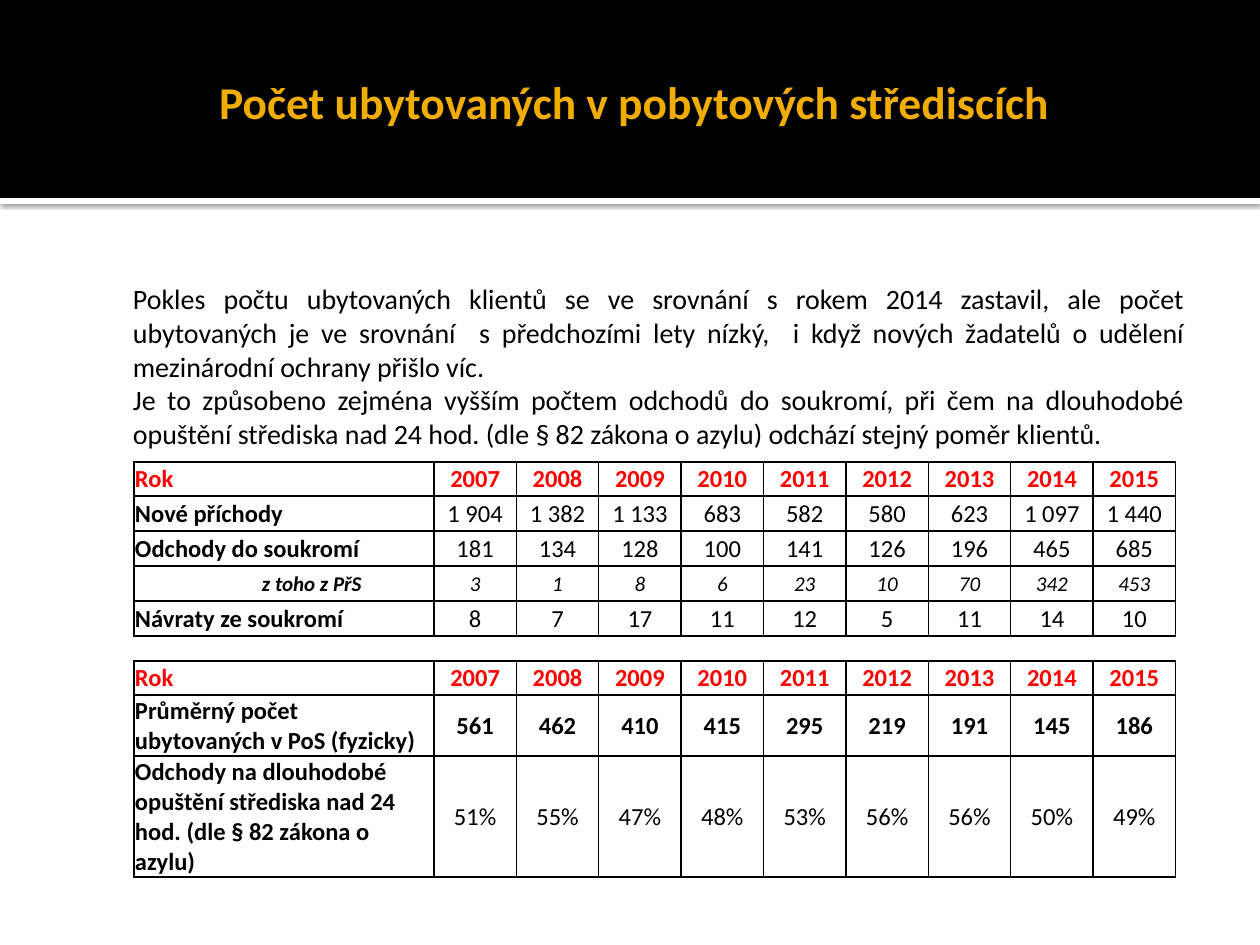
from lxml import etree
from pptx import Presentation
from pptx.dml.color import RGBColor
from pptx.enum.shapes import MSO_SHAPE
from pptx.enum.text import MSO_ANCHOR, PP_ALIGN
from pptx.oxml import parse_xml
from pptx.oxml.ns import nsdecls, qn
from pptx.util import Emu, Pt

RECT = MSO_SHAPE.RECTANGLE
MIDDLE = MSO_ANCHOR.MIDDLE
LEFT, CENTER, JUSTIFY = PP_ALIGN.LEFT, PP_ALIGN.CENTER, PP_ALIGN.JUSTIFY
BLACK = RGBColor(0x00, 0x00, 0x00)
WHITE = RGBColor(0xFF, 0xFF, 0xFF)
GOLD = RGBColor(0xF0, 0xAD, 0x00)
RED = RGBColor(0xFF, 0x00, 0x00)
FONT = "Calibri"

TITLE = "Počet ubytovaných v pobytových střediscích"
BODY = [
    "Pokles počtu ubytovaných klientů se ve srovnání s rokem 2014 zastavil, "
    "ale počet ubytovaných je ve srovnání  s předchozími lety nízký,  "
    "i když nových žadatelů o udělení mezinárodní ochrany přišlo víc.",
    "Je to způsobeno zejména vyšším počtem odchodů do soukromí, při čem na "
    "dlouhodobé opuštění střediska nad 24 hod. (dle § 82 zákona o azylu) "
    "odchází stejný poměr klientů.",
]
YEARS = ["Rok"] + [str(year) for year in range(2007, 2016)]
SUB = "z toho z PřS"
FLOWS = [
    YEARS,
    ["Nové příchody", "1 904", "1 382", "1 133", "683", "582", "580", "623",
     "1 097", "1 440"],
    ["Odchody do soukromí", "181", "134", "128", "100", "141", "126", "196",
     "465", "685"],
    [SUB, "3", "1", "8", "6", "23", "10", "70", "342", "453"],
    ["Návraty ze soukromí", "8", "7", "17", "11", "12", "5", "11", "14", "10"],
]
MEAN = "Průměrný počet ubytovaných v PoS (fyzicky)"
STAYS = [
    YEARS,
    [MEAN, "561", "462", "410", "415", "295", "219", "191", "145", "186"],
    ["Odchody na dlouhodobé opuštění střediska nad 24 hod. (dle § 82 zákona "
     "o azylu)", "51%", "55%", "47%", "48%", "53%", "56%", "56%", "50%", "49%"],
]


def px(count):
    """Turn pixels into EMU."""
    return Emu(round(count * 914400 / 126))


def style(para, size, color, align, bold=False, slant=False):
    """Align a paragraph and format its runs."""
    para.alignment = align
    for run in para.runs:
        font = run.font
        font.name, font.size = FONT, Pt(size)
        font.bold, font.italic = bold, slant
        font.color.rgb = color


def inset(item, left, top, right, base):
    """Set the four margins of a text frame or cell."""
    item.margin_left, item.margin_top = px(left), px(top)
    item.margin_right, item.margin_bottom = px(right), px(base)


def add_bar(slide, left, top, width, height, color):
    """Add a plain filled bar."""
    bar = slide.shapes.add_shape(RECT, px(left), px(top), px(width), px(height))
    bar.shadow.inherit = False
    bar.fill.solid()
    bar.fill.fore_color.rgb = color
    bar.line.fill.background()
    return bar


def add_shade(bar):
    """Give a bar a soft shadow below it."""
    effects = bar._element.spPr.find(qn("a:effectLst"))
    effects.append(parse_xml(
        f'<a:outerShdw {nsdecls("a")} blurRad="31750" dist="10160" '
        'dir="5400000" algn="tl" rotWithShape="0"><a:srgbClr val="000000">'
        '<a:alpha val="60000"/></a:srgbClr></a:outerShdw>'))


def add_text(slide, left, top, width, height):
    """Add a wrapping text box without margins and return its frame."""
    box = slide.shapes.add_textbox(px(left), px(top), px(width), px(height))
    frame = box.text_frame
    frame.word_wrap = True
    inset(frame, 0, 0, 0, 0)
    return frame


def add_head(slide, left, top, width, height):
    """Place the black header with its white rule and title."""
    add_shade(add_bar(slide, left, top + height, width, 6, WHITE))
    add_bar(slide, left, top, width, height, BLACK)
    frame = add_text(slide, left + 64, top + 37, width - 126, 129)
    inset(frame, 13, 6, 6, 6)
    frame.vertical_anchor = MIDDLE
    frame.text = TITLE
    style(frame.paragraphs[0], 26, GOLD, CENTER, bold=True)


def add_body(slide, left, top, width, height):
    """Place the justified paragraphs."""
    frame = add_text(slide, left, top, width, height)
    frame.text = "\n".join(BODY)
    for para in frame.paragraphs:
        style(para, 16, BLACK, JUSTIFY)


def frame_cell(cell):
    """Draw thin black borders round an unfilled cell."""
    props = cell._tc.get_or_add_tcPr()
    for side in ("lnL", "lnR", "lnT", "lnB"):
        line = etree.SubElement(props, qn(f"a:{side}"), w="12700")
        fill = etree.SubElement(line, qn("a:solidFill"))
        etree.SubElement(fill, qn("a:srgbClr"), val=str(BLACK))
    cell.fill.background()


def add_grid(slide, left, top, width, heights, rows):
    """Place a table with a wide label column and equal year columns."""
    count = len(rows[0])
    grid = slide.shapes.add_table(len(rows), count, px(left), px(top),
                                  px(width), px(sum(heights))).table
    grid.first_row = grid.horz_banding = False
    label = 300
    for col, column in enumerate(grid.columns):
        column.width = px(width - label) // (count - 1) if col else px(label)
    for row, (height, texts) in enumerate(zip(heights, rows)):
        grid.rows[row].height = px(height)
        minor = texts[0] == SUB
        strong = row == 0 or texts[0] == MEAN
        for col, text in enumerate(texts):
            cell = grid.cell(row, col)
            frame_cell(cell)
            inset(cell, 128 if minor and col == 0 else 1, 1, 1, 0)
            cell.vertical_anchor = MIDDLE
            cell.text_frame.text = text
            style(cell.text_frame.paragraphs[0], 12 if minor else 14,
                  BLACK if row else RED, CENTER if col else LEFT,
                  bold=strong or col == 0, slant=minor)


def main():
    """Build and save the slide."""
    deck = Presentation()
    deck.slide_width, deck.slide_height = px(1260), px(945)
    slide = deck.slides.add_slide(deck.slide_layouts[6])
    add_head(slide, 0, 0, 1260, 198)
    add_body(slide, 133, 282, 1052, 170)
    add_grid(slide, 134, 462, 1042, [34, 35, 35, 35, 35], FLOWS)
    add_grid(slide, 134, 661, 1042, [34, 61, 121], STAYS)
    deck.save("out.pptx")


if __name__ == "__main__":
    main()
